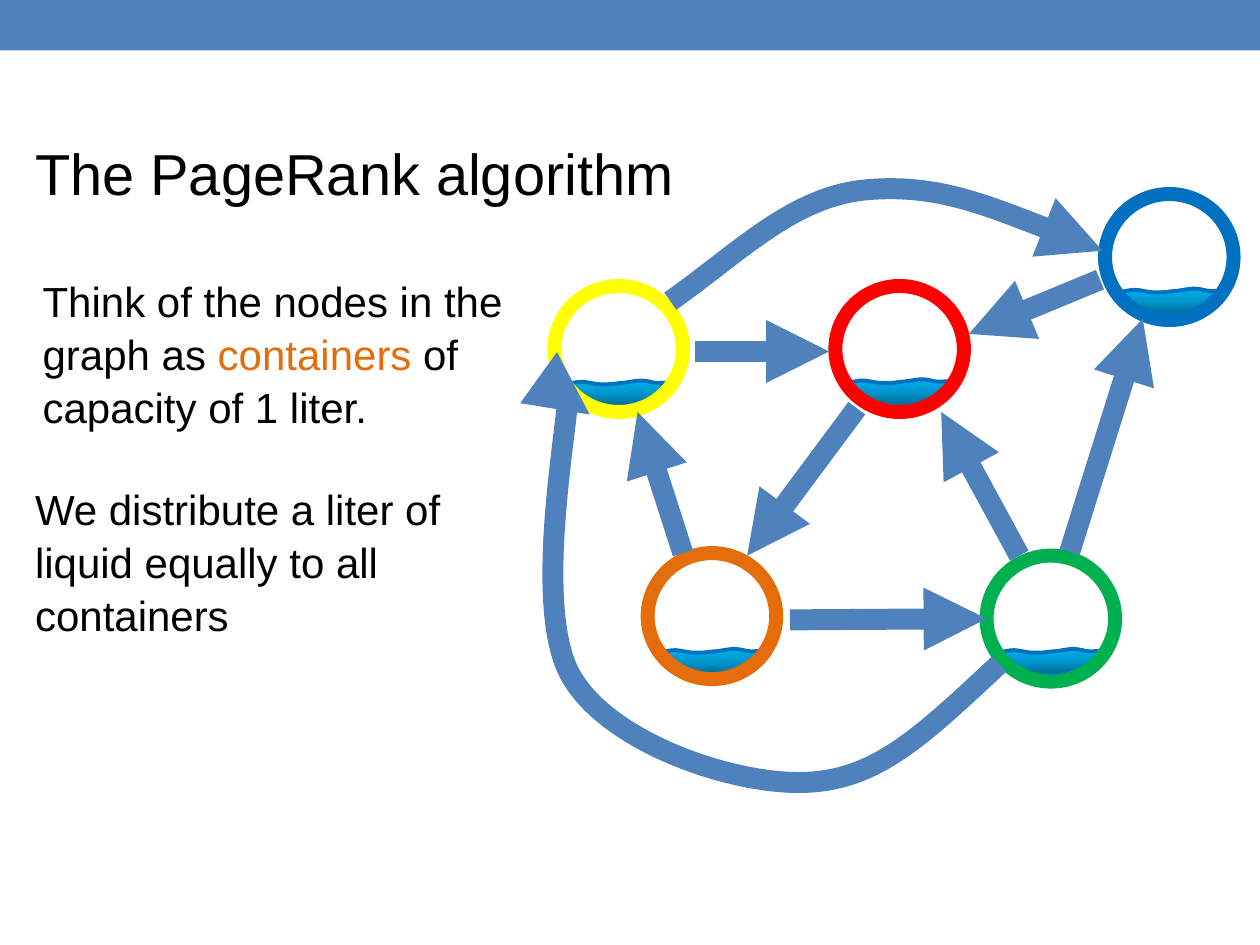
from copy import deepcopy
from dataclasses import dataclass

from lxml import etree
from pptx import Presentation
from pptx import util as u
from pptx.dml.color import RGBColor
from pptx.enum import shapes, text
from pptx.oxml.ns import qn


@dataclass(frozen=True)
class Theme:
    font: str = "Arial"
    title: int = 33
    body: int = 24
    spacing: float = 1.05
    ring: int = 8
    arrow: int = 12
    surface: float = 2.25
    ink: str = "000000"
    accent: str = "4F81BD"
    orange: str = "E46C0A"
    blue: str = "0070C0"
    red: str = "FF0000"
    yellow: str = "FFFF00"
    green: str = "00B050"
    water: tuple = ("00688E", "0094CA", "00B0F0")


T = Theme()
NODE_SIZE = (1.02, 1)
WATER_SIZE = (0.84, 0.21)
WATER = [
    (0, 0.03),
    (0.04, 0.02), (0.08, 0.01), (0.12, 0.01),
    (0.16, 0.01), (0.22, 0.03), (0.27, 0.03),
    (0.32, 0.03), (0.36, 0.03), (0.42, 0.02),
    (0.47, 0.02), (0.54, 0), (0.59, 0),
    (0.64, 0), (0.68, 0.02), (0.72, 0.02),
    (0.76, 0.02), (0.83, 0.01), (0.84, 0.02),
    (0.85, 0.03), (0.82, 0.06), (0.8, 0.07),
    (0.78, 0.09), (0.76, 0.1), (0.73, 0.12),
    (0.71, 0.13), (0.68, 0.15), (0.64, 0.17),
    (0.61, 0.18), (0.57, 0.19), (0.53, 0.2),
    (0.49, 0.2), (0.46, 0.21), (0.41, 0.21),
    (0.37, 0.21), (0.31, 0.2), (0.27, 0.2),
    (0.23, 0.19), (0.21, 0.18), (0.18, 0.17),
    (0.16, 0.16), (0.14, 0.15), (0.12, 0.14),
    (0.1, 0.12), (0.06, 0.09), (0.04, 0.08),
]
NODES = [
    (8.77, 1.54, T.blue, (8.89, 2.29)),
    (6.63, 2.27, T.red, (6.73, 3.01)),
    (5.14, 4.39, T.orange, (5.24, 5.15)),
    (4.4, 2.27, T.yellow, (4.5, 3.02)),
    (7.83, 4.41, T.green, (7.93, 5.15)),
]
LINKS = [
    ((8.73, 2.22), (7.69, 2.65)),
    ((8.49, 4.38), (9.07, 2.53)),
    ((8.09, 4.41), (7.47, 3.27)),
    ((6.27, 4.92), (7.83, 4.91)),
    ((5.42, 4.39), (5.06, 3.27)),
    ((5.52, 2.79), (6.58, 2.79)),
    ((6.8, 3.24), (5.93, 4.41)),
]
CURVED_LINKS = [
    ((5.32, 1.5, 3.43, 0.89),
     [(5.32, 2.39), (5.86, 2.01), (6.27, 1.58), (6.84, 1.51),
      (7.41, 1.45), (8.09, 1.72), (8.75, 1.99)]),
    ((4.39, 3.01, 3.54, 3.21),
     [(7.93, 5.27), (7.3, 5.86), (6.95, 6.19), (6.39, 6.21),
      (5.82, 6.23), (4.85, 5.9), (4.54, 5.38),
      (4.23, 4.87), (4.49, 3.48), (4.51, 3.13),
      (4.54, 2.78), (4.64, 3.27), (4.68, 3.29)]),
]


def rgb(value):
    return RGBColor.from_string(value)


def style_line(shape, color, width):
    shape.line.color.rgb = rgb(color)
    shape.line.width = u.Pt(width)


def add_arrowhead(shape):
    ln = shape._element.spPr.find(qn("a:ln"))
    etree.SubElement(ln, qn("a:tailEnd"), type="triangle")


def add_bar(s):
    sp = s.shapes.add_shape(shapes.MSO_SHAPE.RECTANGLE, 0, 0, u.Inches(10), u.Inches(0.4))
    sp.shadow.inherit = False
    sp.fill.solid()
    sp.fill.fore_color.rgb = rgb(T.accent)
    sp.line.fill.background()


def add_curve(s, box, points, color, width):
    left, top, wide, high = map(u.Inches, box)
    builder = s.shapes.build_freeform(*map(u.Inches, points[0]))
    builder.add_line_segments([tuple(map(u.Inches, p)) for p in points[1:]], close=False)
    sp = builder.convert_to_shape()
    frame = {"left": left, "top": top, "width": wide, "height": high}
    for name, value in frame.items():
        setattr(sp, name, value)
    outline = next(sp._element.iter(qn("a:path")))
    outline.set("w", str(wide))
    outline.set("h", str(high))
    pts = list(outline.iter(qn("a:pt")))
    for pt, (x, y) in zip(pts, points):
        pt.set("x", str(u.Inches(x) - left))
        pt.set("y", str(u.Inches(y) - top))
    for child in list(outline)[1:]:
        outline.remove(child)
    for i in range(1, len(pts), 3):
        etree.SubElement(outline, qn("a:cubicBezTo")).extend(pts[i:i + 3])
    sp.shadow.inherit = False
    sp.fill.background()
    style_line(sp, color, width)
    return sp


def add_water(s, x, y):
    points = [(x + dx, y + dy) for dx, dy in WATER]
    sp = add_curve(s, (x, y, *WATER_SIZE), points, T.blue, T.surface)
    sp.fill.gradient()
    sp.fill.gradient_angle = 90
    stops = next(sp._element.iter(qn("a:gsLst")))
    stops.insert(1, deepcopy(stops[0]))
    for i, (stop, color) in enumerate(zip(sp.fill.gradient_stops, T.water)):
        stop.position = i / 2
        stop.color.rgb = rgb(color)


def add_ring(s, x, y, color):
    sp = s.shapes.add_shape(shapes.MSO_SHAPE.OVAL, *map(u.Inches, (x, y, *NODE_SIZE)))
    sp.shadow.inherit = False
    sp.fill.background()
    style_line(sp, color, T.ring)


def add_link(s, start, end):
    line = s.shapes.add_connector(
        shapes.MSO_CONNECTOR.STRAIGHT, *map(u.Inches, (*start, *end)))
    style_line(line, T.accent, T.arrow)
    add_arrowhead(line)
    etree.SubElement(line._element.spPr, qn("a:effectLst"))


def add_text(s, box, runs, size, wrap=True):
    tf = s.shapes.add_textbox(*map(u.Inches, box)).text_frame
    tf.word_wrap = wrap
    tf.auto_size = text.MSO_AUTO_SIZE.SHAPE_TO_FIT_TEXT
    p = tf.paragraphs[0]
    p.line_spacing = T.spacing
    for words, color in runs:
        r = p.add_run()
        r.text = words
        for name, value in {"name": T.font, "size": u.Pt(size)}.items():
            setattr(r.font, name, value)
        r.font.color.rgb = rgb(color)


def main():
    prs = Presentation()
    prs.slide_width, prs.slide_height = u.Inches(10), u.Inches(7.5)
    s = prs.slides.add_slide(prs.slide_layouts[6])
    add_bar(s)
    for *_, surface in NODES:
        add_water(s, *surface)
    for x, y, color, _ in NODES:
        add_ring(s, x, y, color)
    for start, end in LINKS:
        add_link(s, start, end)
    for box, points in CURVED_LINKS:
        add_arrowhead(add_curve(s, box, points, T.accent, T.arrow))
    add_text(s, (0.18, 1.02, 5.32, 0.66), [("The PageRank algorithm", T.ink)], T.title, wrap=False)
    add_text(s, (0.24, 2.12, 3.93, 1.31), [
        ("Think of the nodes in the graph as ", T.ink),
        ("containers", T.orange),
        (" of capacity of 1 liter.", T.ink),
    ], T.body)
    add_text(s, (0.18, 3.77, 4.1, 1.31), [
        ("We distribute a liter of liquid equally to all containers", T.ink),
    ], T.body)
    prs.save("out.pptx")


if __name__ == "__main__":
    main()
